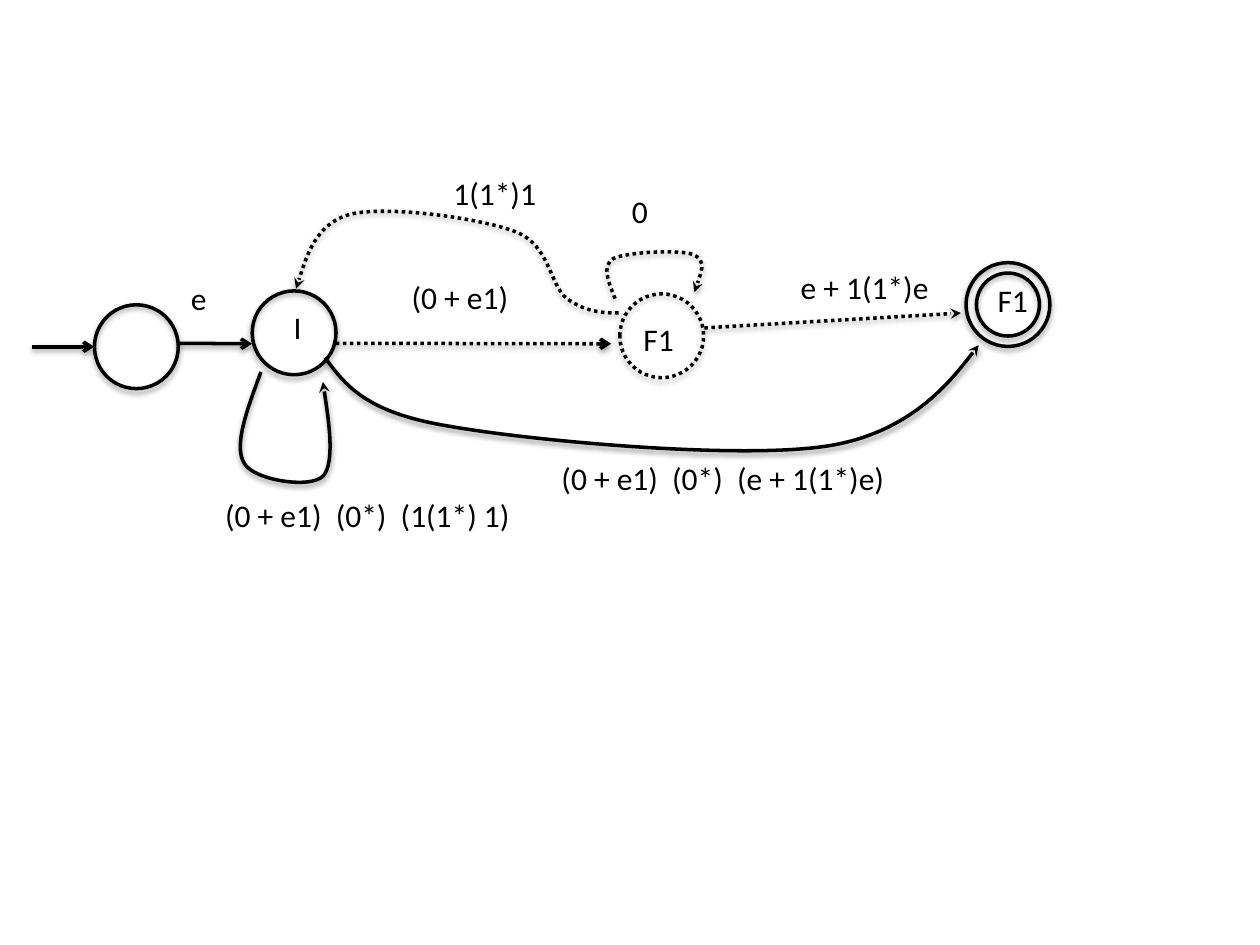
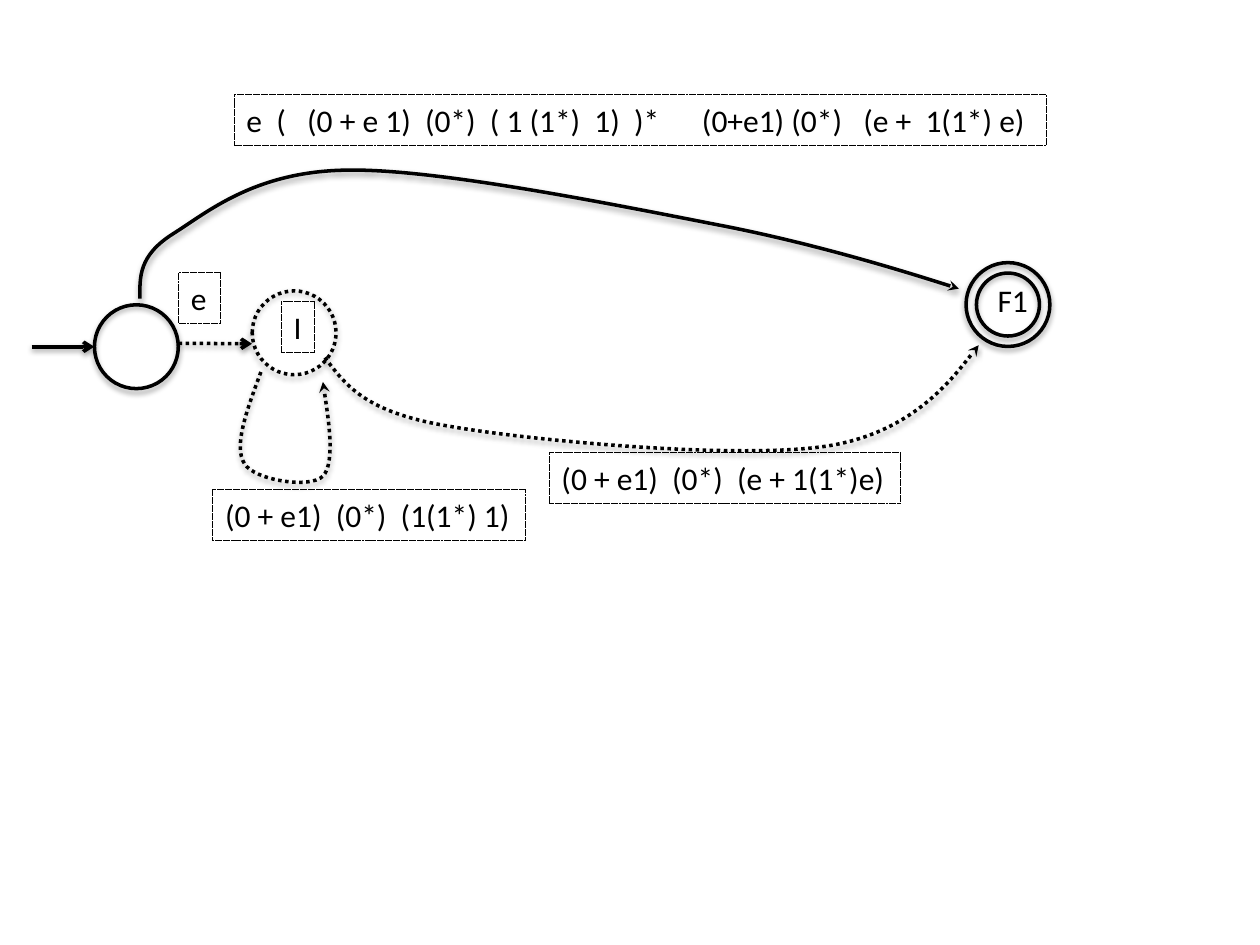
from dataclasses import dataclass
from lxml.etree import SubElement
from pptx import Presentation
from pptx.dml.color import RGBColor
from pptx.enum.dml import MSO_LINE
from pptx.enum.shapes import MSO_CONNECTOR, MSO_SHAPE
from pptx.enum.text import MSO_AUTO_SIZE
from pptx.oxml.ns import qn
from pptx.util import Cm, Pt


@dataclass(frozen=True)
class Theme:
    ink: RGBColor = RGBColor(0, 0, 0)
    font: str = "Calibri"
    label_size: Pt = Pt(18)
    stroke: Pt = Pt(2)
    state_width: float = 1.69
    inner_width: float = 1.27
    label_height: float = 1.02


theme = Theme()

# States: centre x, centre y (cm)
states = {
    "start": (2.75, 6.99),
    "I": (5.93, 6.71),
    "F1": (13.34, 6.77),
    "final": (20.32, 6.14),
}

# Straight transitions: from x, from y, to x, to y, arrowhead
straights = {
    "entry": (0.64, 6.99, 1.9, 6.99, "arrow"),
    "start to I": (3.6, 6.92, 5.08, 6.93, "arrow"),
    "I to F1": (6.77, 6.92, 12.32, 6.93, "arrow"),
    "F1 to final": (14.2, 6.61, 19.37, 6.31, "stealth"),
}

# Curved transitions: a start point, then two handles and an end per segment
curves = {
    "F1 loop": [
        (12.4, 6.02), (12.27, 5.69), (12.12, 5.36), (12.37, 5.21),
        (12.65, 5.08), (13.69, 5.03), (13.97, 5.13),
        (14.27, 5.26), (14, 5.89), (14, 5.89)],
    "F1 to I": [
        (12.47, 6.31), (12.12, 6.31), (11.79, 6.28), (11.43, 6.02),
        (11.07, 5.74), (11.1, 4.95), (10.39, 4.67),
        (9.65, 4.39), (7.8, 4.14), (7.06, 4.32),
        (6.32, 4.52), (5.97, 5.82), (5.97, 5.82)],
    "I loop": [
        (5.26, 7.5), (4.98, 8.26), (4.7, 9), (4.93, 9.35),
        (5.13, 9.68), (6.25, 9.86), (6.51, 9.6),
        (6.78, 9.32), (6.51, 7.7), (6.51, 7.7)],
    "I to final": [
        (6.55, 7.21), (6.96, 7.75), (7.34, 8.31), (9.04, 8.59),
        (10.72, 8.89), (14.91, 9.27), (16.69, 8.99),
        (18.47, 8.71), (19.73, 6.96), (19.73, 6.96)],
    "start to final": [
        (2.82, 6.02), (2.82, 5.59), (2.79, 5.16), (3.48, 4.72),
        (4.17, 4.29), (5.13, 3.45), (7.01, 3.43),
        (8.86, 3.4), (12.6, 4.17), (14.66, 4.57),
        (16.71, 4.98), (19.33, 5.82), (19.33, 5.82)],
}

# Labels: wording, left, top, width
labels = {
    "I": ("I", 5.67, 6.08, 0.68),
    "F1": ("F1", 12.72, 6.32, 1.14),
    "final": ("F1", 19.86, 5.54, 1.14),
    "start to I": ("e", 3.6, 5.5, 0.84),
    "I to F1": ("(0 + e1)", 8.05, 5.49, 2.49),
    "F1 to final": ("e + 1(1*)e", 15.89, 5.28, 3.12),
    "F1 loop": ("0", 12.49, 3.75, 0.84),
    "F1 to I": ("1(1*)1", 8.89, 3.38, 2.18),
    "I loop": ("(0 + e1)  (0*)  (1(1*) 1)", 4.29, 9.87, 6.3),
    "I to final": ("(0 + e1)  (0*)  (e + 1(1*)e)", 11.07, 9.13, 7.09),
    "start to final": (
        "e  (   (0 + e 1)  (0*)  ( 1 (1*)  1)  )*      (0+e1) (0*)   (e +  1(1*) e)",
        4.72, 1.91, 16.38),
}

# Each elimination step: the parts present, those dotted, and whether labels are framed
steps = [
    {
        "parts": ["entry", "start", "start to I", "I", "I to F1", "F1", "F1 loop",
                  "F1 to I", "F1 to final", "final", "I loop", "I to final"],
        "dotted": ["I to F1", "F1", "F1 loop", "F1 to I", "F1 to final"],
        "framed": False,
    },
    {
        "parts": ["entry", "start", "start to I", "I", "final", "I loop",
                  "I to final", "start to final"],
        "dotted": ["start to I", "I", "I loop", "I to final"],
        "framed": True,
    },
]


def style_stroke(shape, dotted, arrowhead=None):
    """Ink line with an optional arrowhead and a soft shadow below it."""
    shape.line.color.rgb = theme.ink
    shape.line.width = theme.stroke
    if dotted:
        shape.line.dash_style = MSO_LINE.ROUND_DOT
    properties = shape.element.spPr
    if arrowhead:
        SubElement(properties.find(qn("a:ln")), qn("a:tailEnd"), type=arrowhead)
    effects = SubElement(properties, qn("a:effectLst"))
    distance, opacity = ("20000", "38000") if arrowhead else ("23000", "35000")
    shadow = SubElement(effects, qn("a:outerShdw"), blurRad="40000", dist=distance,
                        dir="5400000", rotWithShape="0")
    color = SubElement(shadow, qn("a:srgbClr"), val=str(theme.ink))
    SubElement(color, qn("a:alpha"), val=opacity)


def bend_segments(shape):
    """Turn every three straight segments of an outline into one cubic curve."""
    outline = shape.element.spPr.find(".//" + qn("a:path"))
    corners = outline.findall(qn("a:lnTo"))
    for first in range(0, len(corners), 3):
        cubic = SubElement(outline, qn("a:cubicBezTo"))
        for corner in corners[first:first + 3]:
            cubic.append(corner.find(qn("a:pt")))
            outline.remove(corner)


deck = Presentation()
deck.slide_width, deck.slide_height = Cm(25.4), Cm(19.05)

for step in steps:
    page = deck.slides.add_slide(deck.slide_layouts[6])
    for part in step["parts"]:
        dotted = part in step["dotted"]

        # State circles, with a double ring for the final state
        if part in states:
            center_x, center_y = states[part]
            holder, widths = page.shapes, [theme.state_width]
            if part == "final":
                holder = page.shapes.add_group_shape().shapes
                widths.append(theme.inner_width)
            for width in widths:
                ring = holder.add_shape(
                    MSO_SHAPE.OVAL, Cm(center_x - width / 2), Cm(center_y - width / 2),
                    Cm(width), Cm(width))
                ring.fill.background()
                style_stroke(ring, dotted)

        # Straight arrows
        if part in straights:
            *ends, arrowhead = straights[part]
            arrow = page.shapes.add_connector(MSO_CONNECTOR.STRAIGHT, *map(Cm, ends))
            style_stroke(arrow, dotted, arrowhead)

        # Curved arrows
        if part in curves:
            knots = [(Cm(x), Cm(y)) for x, y in curves[part]]
            builder = page.shapes.build_freeform(*knots[0])
            builder.add_line_segments(knots[1:], close=False)
            arc = builder.convert_to_shape()
            bend_segments(arc)
            arc.fill.background()
            style_stroke(arc, dotted, "stealth")

        # Labels
        if part in labels:
            wording, left, top, width = labels[part]
            box = page.shapes.add_textbox(
                Cm(left), Cm(top), Cm(width), Cm(theme.label_height))
            frame = box.text_frame
            frame.text = wording
            frame.word_wrap = False
            frame.auto_size = MSO_AUTO_SIZE.SHAPE_TO_FIT_TEXT
            span = frame.paragraphs[0].runs[0]
            span.font.name = theme.font
            span.font.size = theme.label_size
            span.font.color.rgb = theme.ink
            if step["framed"] and part != "final":
                box.line.color.rgb = theme.ink
                box.line.dash_style = MSO_LINE.ROUND_DOT

deck.save("out.pptx")
